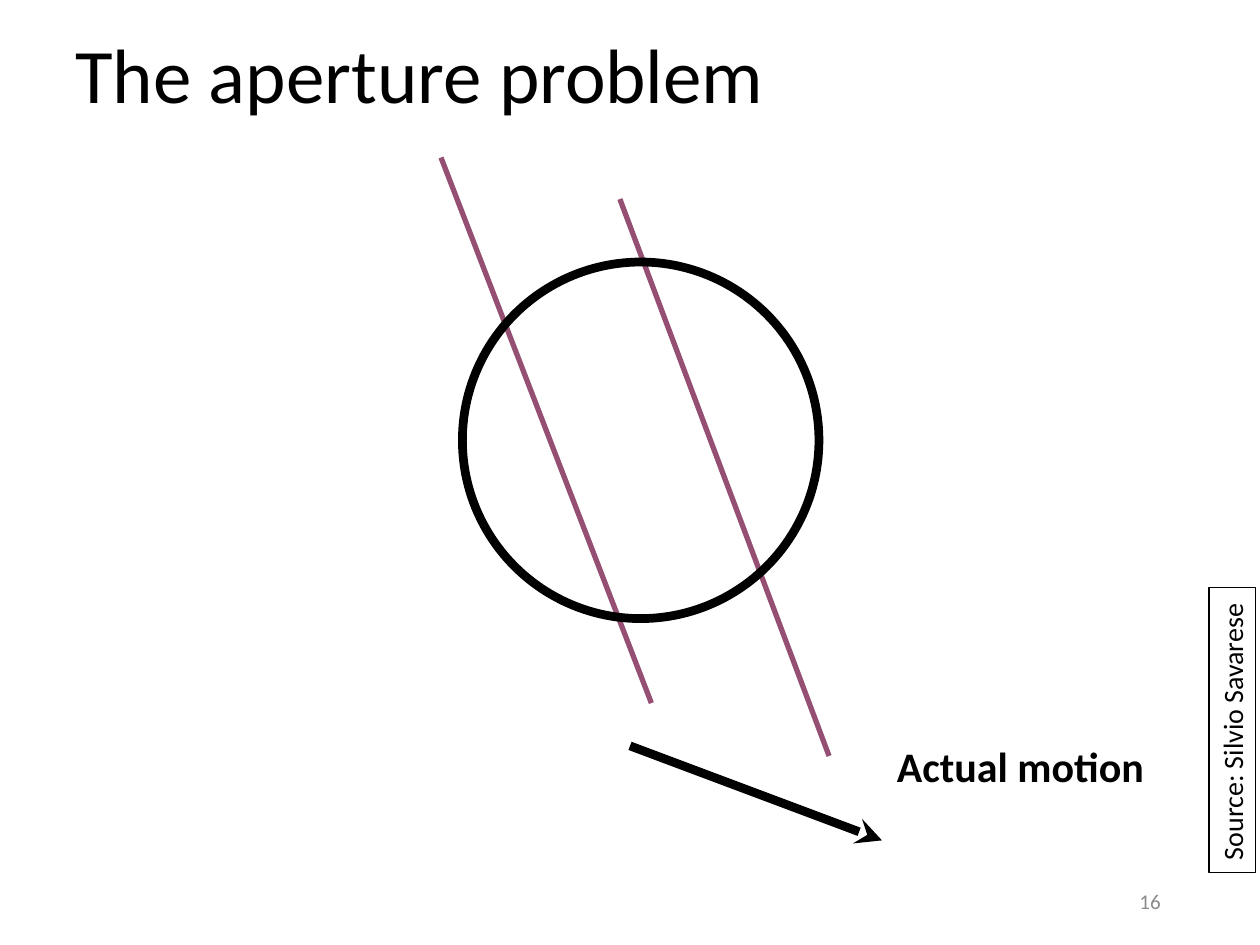
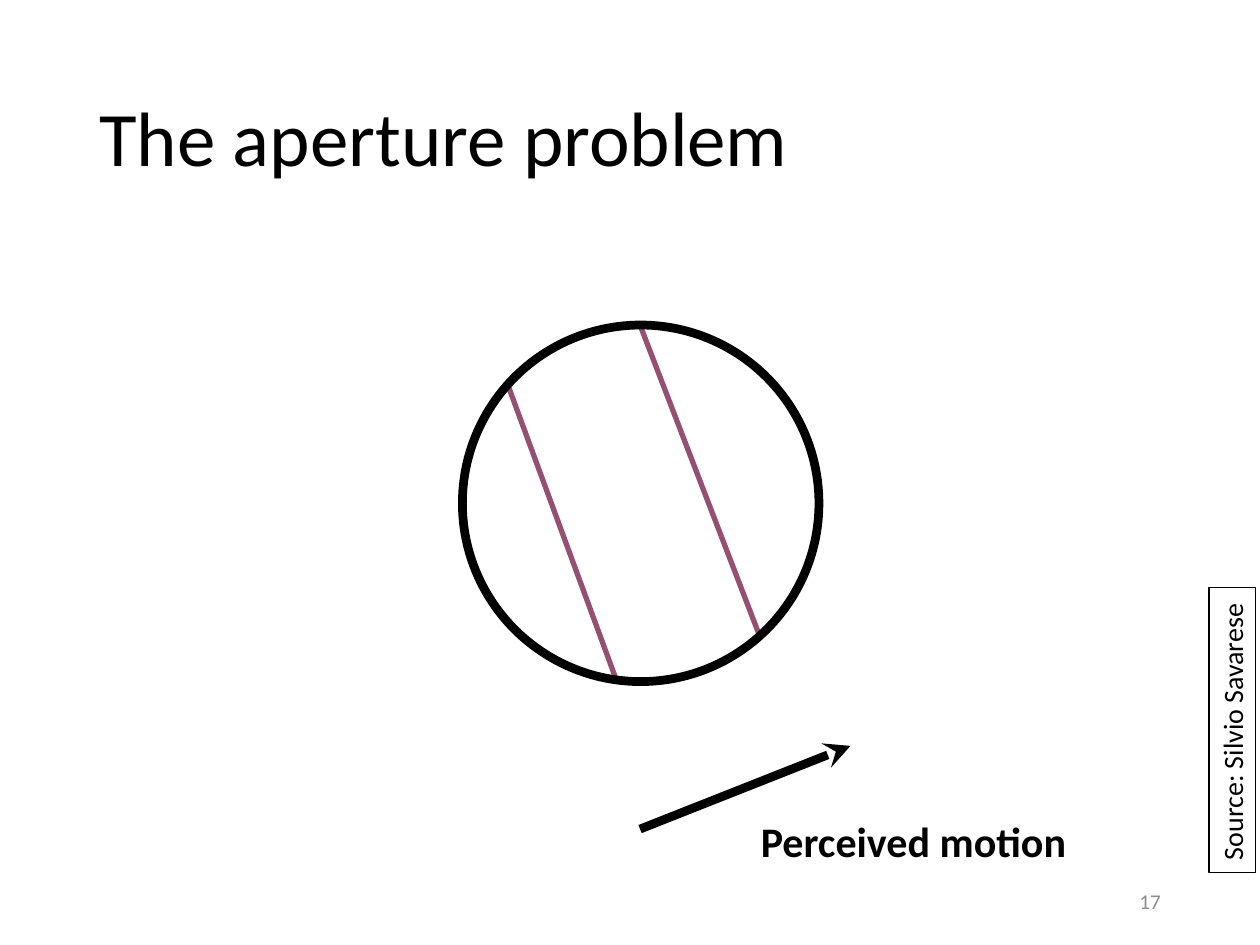
from lxml import etree
from pptx import Presentation
from pptx import util as u
from pptx.dml.color import RGBColor
from pptx.enum import shapes, text
from pptx.oxml.ns import qn

FONT = "Calibri"
COLORS = {"ink": "000000", "stripe": "954F72", "number": "8C8C8C"}
APERTURE_LEFT, APERTURE_SIZE = 3.67, 2.83


def color(name):
    return RGBColor.from_string(COLORS[name])


def set_line(line, name, width):
    line.color.rgb = color(name)
    line.width = u.Pt(width)


def write(shape, words, size, name="ink", bold=False, wrap=True,
          align=text.PP_ALIGN.LEFT, anchor=text.MSO_ANCHOR.TOP):
    frame = shape.text_frame
    frame.word_wrap = wrap
    frame.vertical_anchor = anchor
    paragraph = frame.paragraphs[0]
    paragraph.text = words
    paragraph.alignment = align
    font = paragraph.runs[0].font
    font.name, font.size, font.bold = FONT, u.Pt(size), bold
    font.color.rgb = color(name)
    return paragraph


def add_text(slide, box, words, size, **style):
    shape = slide.shapes.add_textbox(*map(u.Inches, box))
    return write(shape, words, size, **style)


def add_outline(slide, kind, box, width):
    """Add an unfilled preset shape with an ink outline."""
    shape = slide.shapes.add_shape(kind, *map(u.Inches, box))
    shape.shadow.inherit = False
    shape.fill.background()
    set_line(shape.line, "ink", width)
    return shape


def add_line(slide, start, end, name, width):
    line = slide.shapes.add_connector(
        shapes.MSO_CONNECTOR.STRAIGHT, *map(u.Inches, start + end))
    set_line(line.line, name, width)
    etree.SubElement(line._element.spPr, qn("a:effectLst"))
    return line


def add_motion_arrow(slide, start, end):
    arrow = add_line(slide, start, end, "ink", 5)
    outline = arrow.line._get_or_add_ln()
    etree.SubElement(outline, qn("a:tailEnd"), type="stealth")


def add_title(slide, box):
    paragraph = add_text(slide, box, "The aperture problem", 44,
                         anchor=text.MSO_ANCHOR.MIDDLE)
    paragraph.line_spacing = 0.9


def add_source(slide):
    source = add_outline(slide, shapes.MSO_SHAPE.RECTANGLE,
                         (8.65, 5.61, 2.26, 0.37), 0.75)
    source.rotation = 270
    write(source, "Source: Silvio Savarese", 16, wrap=False)


def add_page_number(slide, number):
    add_text(slide, (7.06, 6.95, 2.25, 0.4), str(number), 12, name="number",
             align=text.PP_ALIGN.RIGHT, anchor=text.MSO_ANCHOR.MIDDLE)


def add_aperture_slide(presentation, number, title_box, stripes,
                       aperture_top, arrow, label, label_box):
    slide = presentation.slides.add_slide(presentation.slide_layouts[6])
    add_title(slide, title_box)
    for start, end in stripes:
        add_line(slide, start, end, "stripe", 3)
    add_outline(slide, shapes.MSO_SHAPE.OVAL,
                (APERTURE_LEFT, aperture_top, APERTURE_SIZE, APERTURE_SIZE), 5)
    add_motion_arrow(slide, *arrow)
    add_text(slide, label_box, label, 24, bold=True, wrap=False)
    add_source(slide)
    add_page_number(slide, number)


def main():
    presentation = Presentation()
    presentation.slide_width = u.Inches(10)
    presentation.slide_height = u.Inches(7.5)
    add_aperture_slide(
        presentation, 16,
        title_box=(0.5, 0, 9, 1.25),
        stripes=[((3.5, 1.25), (5.17, 5.58)), ((4.92, 1.58), (6.58, 6))],
        aperture_top=2.08,
        arrow=((5, 5.92), (7, 6.67)),
        label="Actual motion", label_box=(7.02, 5.83, 2.42, 0.5))
    add_aperture_slide(
        presentation, 17,
        title_box=(0.69, 0.4, 8.62, 1.45),
        stripes=[((4.04, 3.08), (4.9, 5.42)), ((5.08, 2.58), (6.03, 5.05))],
        aperture_top=2.58,
        arrow=((5.08, 6.58), (6.75, 5.92)),
        label="Perceived motion", label_box=(5.94, 6.42, 2.82, 0.5))
    presentation.save("out.pptx")


if __name__ == "__main__":
    main()
